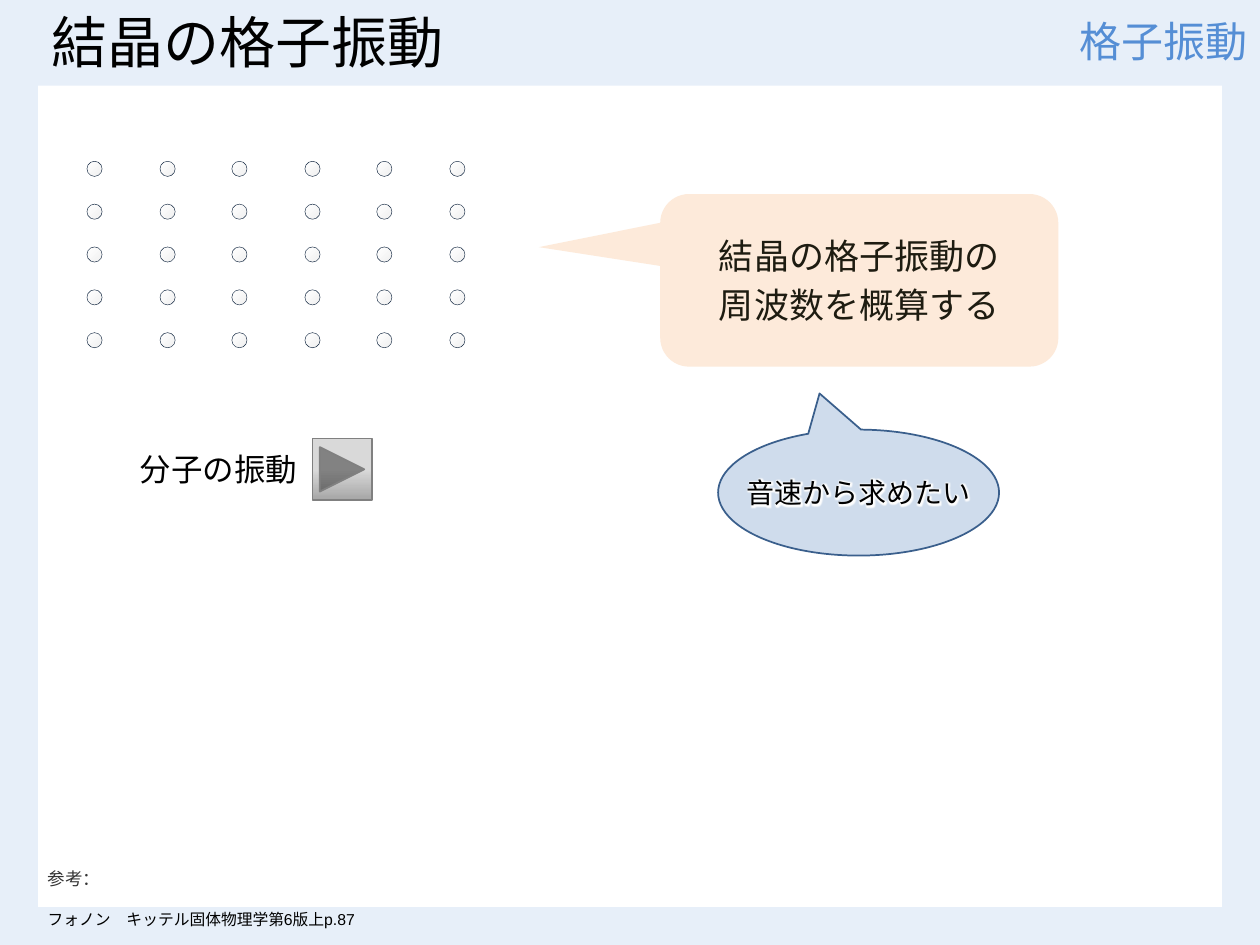
from lxml.etree import SubElement
from pptx import Presentation
from pptx.dml.color import RGBColor
from pptx.enum.shapes import MSO_SHAPE
from pptx.enum.text import MSO_ANCHOR, PP_ALIGN
from pptx.oxml.ns import qn
from pptx.util import Pt

PX = 9144  # 100 px to the inch


def rgb(value):
    return RGBColor.from_string(value)


def style(sp, fill=None, line=None, width=1, adj=(), stops=(), angle=0):
    """Set fill (plain or gradient), outline and adjustments of a shape."""
    sp.shadow.inherit = False
    for i, value in enumerate(adj):
        sp.adjustments[i] = value
    if stops:
        sp.fill.gradient()
        sp.fill.gradient_angle = 360 - angle
        gs_list = sp._element.spPr.find(".//" + qn("a:gsLst"))
        for gs in list(gs_list):
            gs_list.remove(gs)
        for pos, color in stops:
            gs = SubElement(gs_list, qn("a:gs"), pos=str(pos * 1000))
            SubElement(gs, qn("a:srgbClr"), val=color)
    else:
        sp.fill.solid()
        sp.fill.fore_color.rgb = rgb(fill)
    if line:
        sp.line.color.rgb = rgb(line)
        sp.line.width = Pt(width)
    else:
        sp.line.fill.background()


prs = Presentation()
prs.slide_width, prs.slide_height = 1000 * PX, 750 * PX
s = prs.slides.add_slide(prs.slide_layouts[5])
title = s.shapes.title

# Pale border and header band, behind the title
for kind, height, adj in [(MSO_SHAPE.FRAME, 750, [0.04]), (MSO_SHAPE.RECTANGLE, 68, [])]:
    sp = s.shapes.add_shape(kind, 0, 0, 1000 * PX, height * PX)
    style(sp, "E7EFF9", adj=adj)
    title._element.addprevious(sp._element)

# Crystal lattice, one group per column
atom_stops = [(0, "FFFFFF"), (90, "F2F2F2"), (100, "808080")]
for col in range(6):
    column = s.shapes.add_group_shape()
    for row in range(5):
        x, y = round(69 + 57.6 * col), 128 + 34 * row
        atom = column.shapes.add_shape(MSO_SHAPE.OVAL, x * PX, y * PX, 12 * PX, 12 * PX)
        style(atom, line="0F243E", width=0.25, stops=atom_stops, angle=45)

# Play button
button = s.shapes.add_shape(MSO_SHAPE.ACTION_BUTTON_FORWARD_OR_NEXT,
                            248 * PX, 348 * PX, 47 * PX, 49 * PX)
style(button, line="808080", angle=90,
      stops=[(0, "D9D9D9"), (50, "D9D9D9"), (100, "A6A6A6")])

# Callouts
goal = s.shapes.add_shape(MSO_SHAPE.ROUNDED_RECTANGULAR_CALLOUT,
                          524 * PX, 154 * PX, 316 * PX, 137 * PX)
style(goal, "FDEADA", adj=[-0.805, -0.192, 0.167])
wish = s.shapes.add_shape(MSO_SHAPE.OVAL_CALLOUT, 570 * PX, 341 * PX, 223 * PX, 100 * PX)
style(wish, "95B3D7", "3A5F8C", adj=[-0.139, -0.787])
fill_color = wish._element.spPr.find(qn("a:solidFill"))[0]
SubElement(fill_color, qn("a:alpha"), val="45000")

# Text boxes
title.left, title.top, title.width, title.height = 31 * PX, 0, 937 * PX, 66 * PX
section = s.shapes.add_textbox(500 * PX, 0, 500 * PX, 65 * PX)
label = s.shapes.add_textbox(101 * PX, 352 * PX, 146 * PX, 40 * PX)
source = s.shapes.add_textbox(28 * PX, 683 * PX, 882 * PX, 59 * PX)

# Wording: shape, anchor, wrap, alignment, paragraphs (text, size, font, colour, space before)
LEFT, CENTER, RIGHT = PP_ALIGN.LEFT, PP_ALIGN.CENTER, PP_ALIGN.RIGHT
TOP, MIDDLE, BOTTOM = MSO_ANCHOR.TOP, MSO_ANCHOR.MIDDLE, MSO_ANCHOR.BOTTOM
texts = [
    (title, MIDDLE, True, LEFT, [("結晶の格子振動", 32, "Calibri", "000000", 0)]),
    (section, MIDDLE, True, RIGHT, [("格子振動", 24, "Calibri", "558ED5", 0)]),
    (label, TOP, False, LEFT, [("分子の振動", 18, "Calibri", "000000", 0)]),
    (source, BOTTOM, True, LEFT, [
        ("参考：", 10, "Arial", "333333", 0),
        ("フォノン　キッテル固体物理学第6版上p.87", 9, "Arial", "000000", 12)]),
    (goal, MIDDLE, False, CENTER, [
        ("結晶の格子振動の", 20, "Calibri", "1E1C11", 4),
        ("周波数を概算する", 20, "Calibri", "1E1C11", 4)]),
    (wish, MIDDLE, False, CENTER, [("音速から求めたい", 16, "Calibri", "000000", 0)]),
]
for sp, anchor, wrap, align, paragraphs in texts:
    tf = sp.text_frame
    tf.vertical_anchor, tf.word_wrap = anchor, wrap
    for i, (text, size, font, color, before) in enumerate(paragraphs):
        p = tf.add_paragraph() if i else tf.paragraphs[0]
        p.alignment, p.space_before = align, Pt(before)
        r = p.add_run()
        r.text = text
        for name, value in {"size": Pt(size), "name": font}.items():
            setattr(r.font, name, value)
        r.font.color.rgb = rgb(color)

# White glow behind the words in the oval callout
r = wish.text_frame.paragraphs[0].runs[0]
text_fill = r.font._element.find(qn("a:solidFill"))
effects = SubElement(r.font._element, qn("a:effectLst"))
glow = SubElement(effects, qn("a:glow"), rad="63500")
SubElement(glow, qn("a:srgbClr"), val="FFFFFF")
text_fill.addnext(effects)

prs.save("out.pptx")
